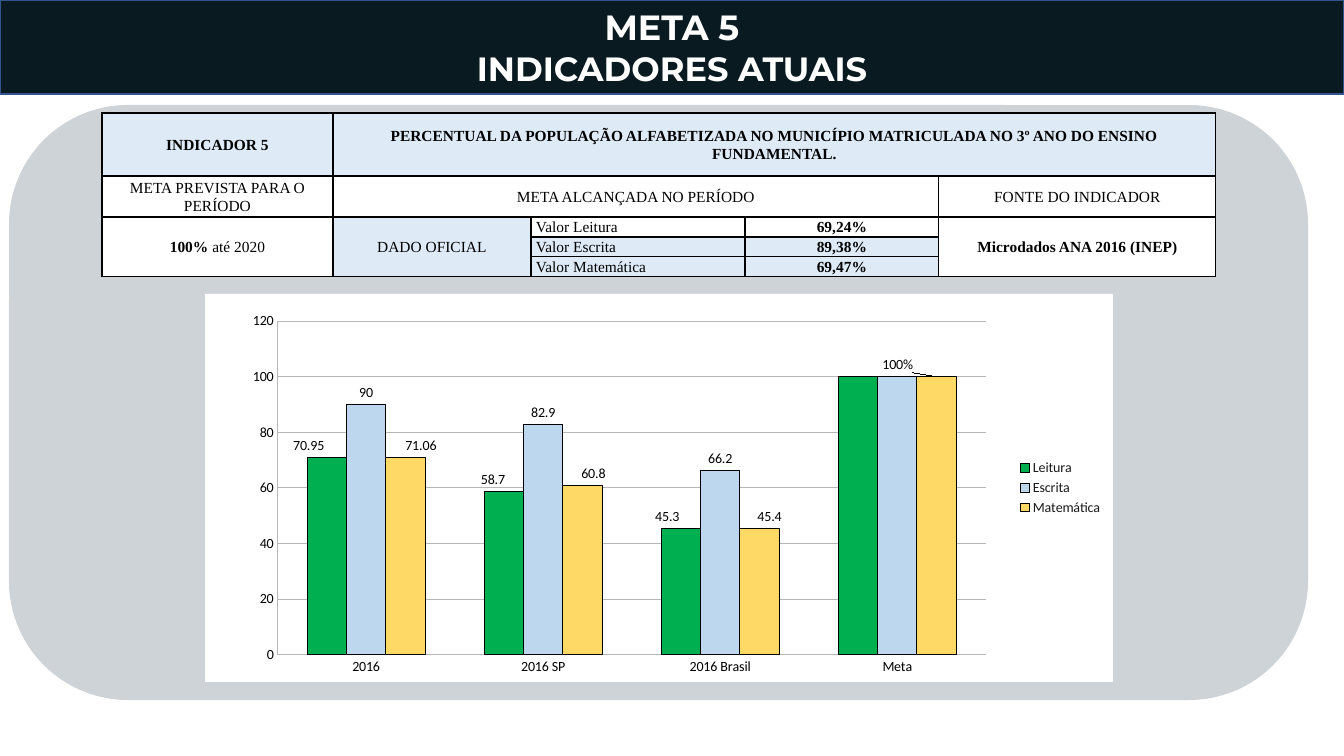
from lxml.etree import SubElement
from pptx import Presentation
from pptx.chart.data import CategoryChartData
from pptx.dml.color import RGBColor
from pptx.enum.chart import XL_CHART_TYPE as ChartType
from pptx.enum.chart import XL_LABEL_POSITION as LabelPosition
from pptx.enum.chart import XL_LEGEND_POSITION as LegendPosition
from pptx.enum.chart import XL_TICK_MARK as TickMark
from pptx.enum.shapes import MSO_SHAPE as ShapeType
from pptx.enum.text import MSO_ANCHOR as Anchor
from pptx.enum.text import MSO_AUTO_SIZE as AutoSize
from pptx.enum.text import PP_ALIGN as Align
from pptx.oxml import parse_xml
from pptx.oxml.ns import nsdecls, qn
from pptx.util import Pt

EMU_PER_PX = 914400 / 100.8
COLORS = {
    "banner": "0A1A21", "banner_line": "325491", "panel": "CED3D8",
    "white": "FFFFFF", "black": "000000", "pale_blue": "DEEBF7",
    "green": "00B050", "blue": "BDD7EE", "yellow": "FFD966",
    "grid": "B7B7B7", "legend": "1A1A1A",
}

# Table: row, column, rows spanned, columns spanned, runs (text, bold), fill
COLUMN_WIDTHS = [231, 198, 214, 194, 277]
ROW_HEIGHTS = [63, 41, 20, 20, 20]
CELLS = [
    (0, 0, 1, 1, [("INDICADOR 5", True)], "pale_blue"),
    (0, 1, 1, 4, [("PERCENTUAL DA POPULAÇÃO ALFABETIZADA NO MUNICÍPIO "
                   "MATRICULADA NO 3º ANO DO ENSINO FUNDAMENTAL.", True)], "pale_blue"),
    (1, 0, 1, 1, [("META PREVISTA PARA O PERÍODO", False)], "white"),
    (1, 1, 1, 3, [("META ALCANÇADA NO PERÍODO", False)], "white"),
    (1, 4, 1, 1, [("FONTE DO INDICADOR", False)], "white"),
    (2, 0, 3, 1, [("100%", True), (" até 2020", False)], "white"),
    (2, 1, 3, 1, [("DADO OFICIAL", False)], "pale_blue"),
    (2, 4, 3, 1, [("Microdados ANA 2016 (INEP)", True)], "white"),
]
RESULTS = [("Valor Leitura", "69,24%", "white"),
           ("Valor Escrita", "89,38%", "pale_blue"),
           ("Valor Matemática", "69,47%", "pale_blue")]
for row, (name, value, fill) in enumerate(RESULTS, start=2):
    CELLS.append((row, 2, 1, 1, [(name, False)], fill))
    CELLS.append((row, 3, 1, 1, [(value, True)], fill))

# Chart: name, values, colour, sideways label shifts in px, text of the goal label
CATEGORIES = ["2016", "2016 SP", "2016 Brasil", "Meta"]
GOAL = CATEGORIES.index("Meta")
SERIES = [
    ("Leitura", [70.95, 58.7, 45.3, 100], "green", {0: -18, 1: -11, 2: -14}, None),
    ("Escrita", [90, 82.9, 66.2, 100], "blue", {}, None),
    ("Matemática", [71.06, 60.8, 45.4, 100], "yellow", {0: 15, 1: 11, 2: 10, 3: -39}, "100%"),
]


def px(value):
    return round(value * EMU_PER_PX)


def rgb(name):
    return RGBColor.from_string(COLORS[name])


def manual_layout(**settings):
    layout = parse_xml(f"<c:layout {nsdecls('c')}><c:manualLayout/></c:layout>")
    for tag, value in settings.items():
        SubElement(layout[0], qn(f"c:{tag}")).set("val", str(value))
    return layout


class SlideBuilder:
    def __init__(self, presentation):
        self.slide = presentation.slides.add_slide(presentation.slide_layouts[5])

    def paint(self, item, fill, line=None, width=1):
        item.fill.solid()
        item.fill.fore_color.rgb = rgb(fill)
        if line:
            item.line.color.rgb = rgb(line)
            item.line.width = Pt(width)
        else:
            item.line.fill.background()

    def style(self, font, face, size, color="black", bold=False):
        font.name, font.size, font.bold = face, Pt(size), bold
        font.color.rgb = rgb(color)

    def add_run(self, paragraph, text, face, size, color="black", bold=False):
        run = paragraph.add_run()
        run.text = text
        self.style(run.font, face, size, color, bold)

    def title(self, box, lines):
        title = self.slide.shapes.title
        title.left, title.top, title.width, title.height = map(px, box)
        self.paint(title, "banner", "banner_line")
        frame = title.text_frame
        frame.auto_size = AutoSize.NONE
        frame.vertical_anchor = Anchor.MIDDLE
        frame.margin_top = frame.margin_bottom = 0
        for number, (text, size) in enumerate(lines):
            paragraph = frame.add_paragraph() if number else frame.paragraphs[0]
            paragraph.alignment = Align.CENTER
            self.add_run(paragraph, text, "Montserrat", size, "white", True)

    def panel(self, box, corner):
        shape = self.slide.shapes.add_shape(ShapeType.ROUNDED_RECTANGLE, *map(px, box))
        shape.adjustments[0] = corner
        shape.shadow.inherit = False
        self.paint(shape, "panel")

    def border(self, cell):
        properties = cell._tc.get_or_add_tcPr()
        for side in ("lnL", "lnR", "lnT", "lnB"):
            properties.append(parse_xml(
                f'<a:{side} {nsdecls("a")} w="12700"><a:solidFill>'
                f'<a:srgbClr val="{COLORS["black"]}"/></a:solidFill></a:{side}>'))

    def table(self, left, top):
        table = self.slide.shapes.add_table(
            len(ROW_HEIGHTS), len(COLUMN_WIDTHS), px(left), px(top),
            px(sum(COLUMN_WIDTHS)), px(sum(ROW_HEIGHTS))).table
        table.first_row = table.horz_banding = False
        for column, width in zip(table.columns, COLUMN_WIDTHS):
            column.width = px(width)
        for row, height in zip(table.rows, ROW_HEIGHTS):
            row.height = px(height)
        for cell in table.iter_cells():
            self.border(cell)
            cell.fill.solid()
            cell.fill.fore_color.rgb = rgb("white")
            cell.margin_left = cell.margin_right = px(5)
            cell.margin_top = cell.margin_bottom = 0
            cell.vertical_anchor = Anchor.MIDDLE
            cell.text_frame.paragraphs[0].font.size = Pt(11)
        for row, column, rows, columns, runs, fill in CELLS:
            cell = table.cell(row, column)
            if rows * columns > 1:
                cell.merge(table.cell(row + rows - 1, column + columns - 1))
            cell.fill.fore_color.rgb = rgb(fill)
            paragraph = cell.text_frame.paragraphs[0]
            paragraph.alignment = Align.LEFT if column == 2 else Align.CENTER
            paragraph.line_spacing = 1.07
            paragraph.space_after = Pt(8)
            for text, bold in runs:
                self.add_run(paragraph, text, "Times New Roman", 11, bold=bold)

    def series_labels(self, series, shifts, goal_text, chart_width):
        labels = series.data_labels
        labels.show_value = True
        labels.position = LabelPosition.OUTSIDE_END
        self.style(labels.font, "Calibri", 10)
        goal_label = series.points[GOAL].data_label
        if goal_text:
            self.add_run(goal_label.text_frame.paragraphs[0], goal_text, "Calibri", 10)
        for point in {*shifts, GOAL}:
            series.points[point].data_label.position = LabelPosition.OUTSIDE_END
        for label in series._element.iter(qn("c:dLbl")):
            index = label.find(qn("c:idx"))
            point = int(index.get("val"))
            if point in shifts:
                index.addnext(manual_layout(x=round(shifts[point] / chart_width, 3), y=0))
            elif point == GOAL:
                for child in list(label)[1:]:
                    label.remove(child)
                SubElement(label, qn("c:delete")).set("val", "1")

    def chart(self, box, plot_box):
        data = CategoryChartData()
        data.categories = CATEGORIES
        for name, values, *_ in SERIES:
            data.add_series(name, values)
        chart = self.slide.shapes.add_chart(
            ChartType.COLUMN_CLUSTERED, *map(px, box), data).chart
        chart.has_title = False
        self.style(chart.font, "Calibri", 10)
        # White background and fixed plot area
        chart._chartSpace.find(qn("c:txPr")).addprevious(parse_xml(
            f'<c:spPr {nsdecls("c", "a")}><a:solidFill><a:srgbClr val="{COLORS["white"]}"/>'
            '</a:solidFill><a:ln><a:noFill/></a:ln></c:spPr>'))
        plot_area = chart._chartSpace.chart.plotArea
        for layout in plot_area.findall(qn("c:layout")):
            plot_area.remove(layout)
        x, y, width, height = plot_box
        plot_area.insert(0, manual_layout(layoutTarget="inner", xMode="edge", yMode="edge",
                                          x=x, y=y, w=width, h=height))
        # Axes and legend
        for axis in (chart.category_axis, chart.value_axis):
            axis.major_tick_mark = axis.minor_tick_mark = TickMark.NONE
            axis.format.line.color.rgb = rgb("grid")
            self.style(axis.tick_labels.font, "Calibri", 10)
        axis.minimum_scale, axis.maximum_scale, axis.major_unit = 0, 120, 20
        axis.major_gridlines.format.line.color.rgb = rgb("grid")
        axis.major_gridlines.format.line.width = Pt(0.75)
        chart.has_legend = True
        chart.legend.position = LegendPosition.RIGHT
        chart.legend.include_in_layout = False
        self.style(chart.legend.font, "Calibri", 10, "legend")
        # Bars
        plot = chart.plots[0]
        plot.vary_by_categories = False
        plot.gap_width, plot.overlap = 150, 0
        for series, (_, _, color, shifts, goal_text) in zip(plot.series, SERIES):
            self.paint(series.format, color, "black", 0.75)
            self.series_labels(series, shifts, goal_text, box[2])


def main():
    presentation = Presentation()
    presentation.slide_width, presentation.slide_height = px(1344), px(756)
    builder = SlideBuilder(presentation)
    builder.title((0, 0, 1344, 94), [("META 5", 25), ("INDICADORES ATUAIS", 24)])
    builder.panel((9, 105, 1299, 595), 0.2)
    builder.table(102, 113)
    builder.chart((205, 294, 908, 388), (0.08, 0.07, 0.78, 0.86))
    presentation.save("out.pptx")


if __name__ == "__main__":
    main()
